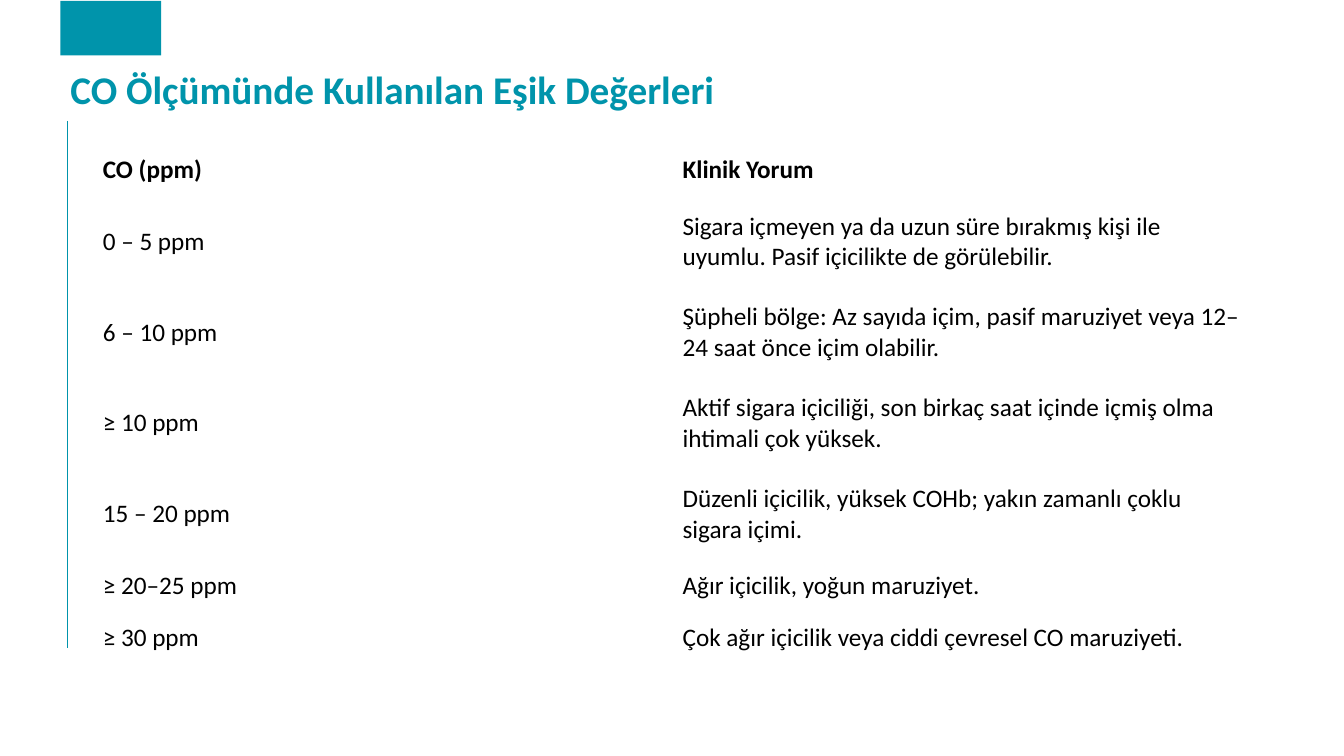
from dataclasses import dataclass

from lxml import etree
from pptx import Presentation
from pptx import util as u
from pptx.dml.color import RGBColor
from pptx.enum import shapes, text
from pptx.oxml import ns


@dataclass(frozen=True)
class Theme:
    """Colours, font and type sizes of the slide."""
    accent: RGBColor = RGBColor(0x00, 0x94, 0xAB)
    ink: RGBColor = RGBColor(0x00, 0x00, 0x00)
    font: str = "Calibri"
    title_size: int = 28
    body_size: int = 18


class SlideBuilder:
    """Draws themed elements on the current slide."""

    def __init__(self, slide, theme):
        self.slide = slide
        self.theme = theme

    def style(self, p, size, color, bold=False):
        p.font.name = self.theme.font
        p.font.size = u.Pt(size)
        p.font.color.rgb = color
        p.font.bold = bold

    def rule(self, x, top, bottom):
        line = self.slide.shapes.add_connector(
            shapes.MSO_CONNECTOR.STRAIGHT,
            *map(u.Inches, (x, top, x, bottom)))
        line.line.color.rgb = self.theme.accent
        line.line.width = u.Pt(1)
        etree.SubElement(line._element.spPr, ns.qn("a:effectLst"))

    def block(self, *box):
        sp = self.slide.shapes.add_shape(
            shapes.MSO_SHAPE.RECTANGLE, *map(u.Inches, box))
        sp.shadow.inherit = False
        sp.fill.solid()
        sp.fill.fore_color.rgb = self.theme.accent
        sp.line.fill.background()

    def title(self, words, *box):
        tf = self.slide.shapes.add_textbox(*map(u.Inches, box)).text_frame
        tf.word_wrap = True
        tf.vertical_anchor = text.MSO_ANCHOR.MIDDLE
        p = tf.paragraphs[0]
        p.text = words
        p.line_spacing = 0.9
        self.style(p, self.theme.title_size, self.theme.accent, bold=True)

    def table(self, rows, heights, left, top, width):
        frame = self.slide.shapes.add_table(
            len(rows), len(rows[0]),
            *map(u.Inches, (left, top, width, sum(heights))))
        table = frame.table
        table.first_row = table.horz_banding = False
        for i, (row, height) in enumerate(zip(rows, heights)):
            table.rows[i].height = u.Inches(height)
            for j, words in enumerate(row):
                cell = table.cell(i, j)
                cell.fill.background()
                cell.vertical_anchor = text.MSO_ANCHOR.MIDDLE
                p = cell.text_frame.paragraphs[0]
                p.text = words
                self.style(p, self.theme.body_size, self.theme.ink, bold=i == 0)


THRESHOLDS = [
    ("CO (ppm)", "Klinik Yorum"),
    ("0 – 5 ppm", "Sigara içmeyen ya da uzun süre bırakmış kişi ile uyumlu. "
                  "Pasif içicilikte de görülebilir."),
    ("6 – 10 ppm", "Şüpheli bölge: Az sayıda içim, pasif maruziyet veya "
                   "12–24 saat önce içim olabilir."),
    ("≥ 10 ppm", "Aktif sigara içiciliği, son birkaç saat içinde içmiş olma "
                 "ihtimali çok yüksek."),
    ("15 – 20 ppm", "Düzenli içicilik, yüksek COHb; yakın zamanlı çoklu "
                    "sigara içimi."),
    ("≥ 20–25 ppm", "Ağır içicilik, yoğun maruziyet."),
    ("≥ 30 ppm", "Çok ağır içicilik veya ciddi çevresel CO maruziyeti."),
]
ROW_HEIGHTS = [0.52] + [0.9] * 4 + [0.52] * 2


def main():
    prs = Presentation()
    prs.slide_width = u.Inches(13.33)
    prs.slide_height = u.Inches(7.5)
    s = SlideBuilder(prs.slides.add_slide(prs.slide_layouts[6]), Theme())
    s.rule(0.67, 1.2, 6.43)
    s.block(0.6, 0.01, 1, 0.54)
    s.title("CO Ölçümünde Kullanılan Eşik Değerleri", 0.6, 0.64, 12.13, 0.55)
    s.table(THRESHOLDS, ROW_HEIGHTS, 0.92, 1.43, 11.5)
    prs.save("out.pptx")


if __name__ == "__main__":
    main()
